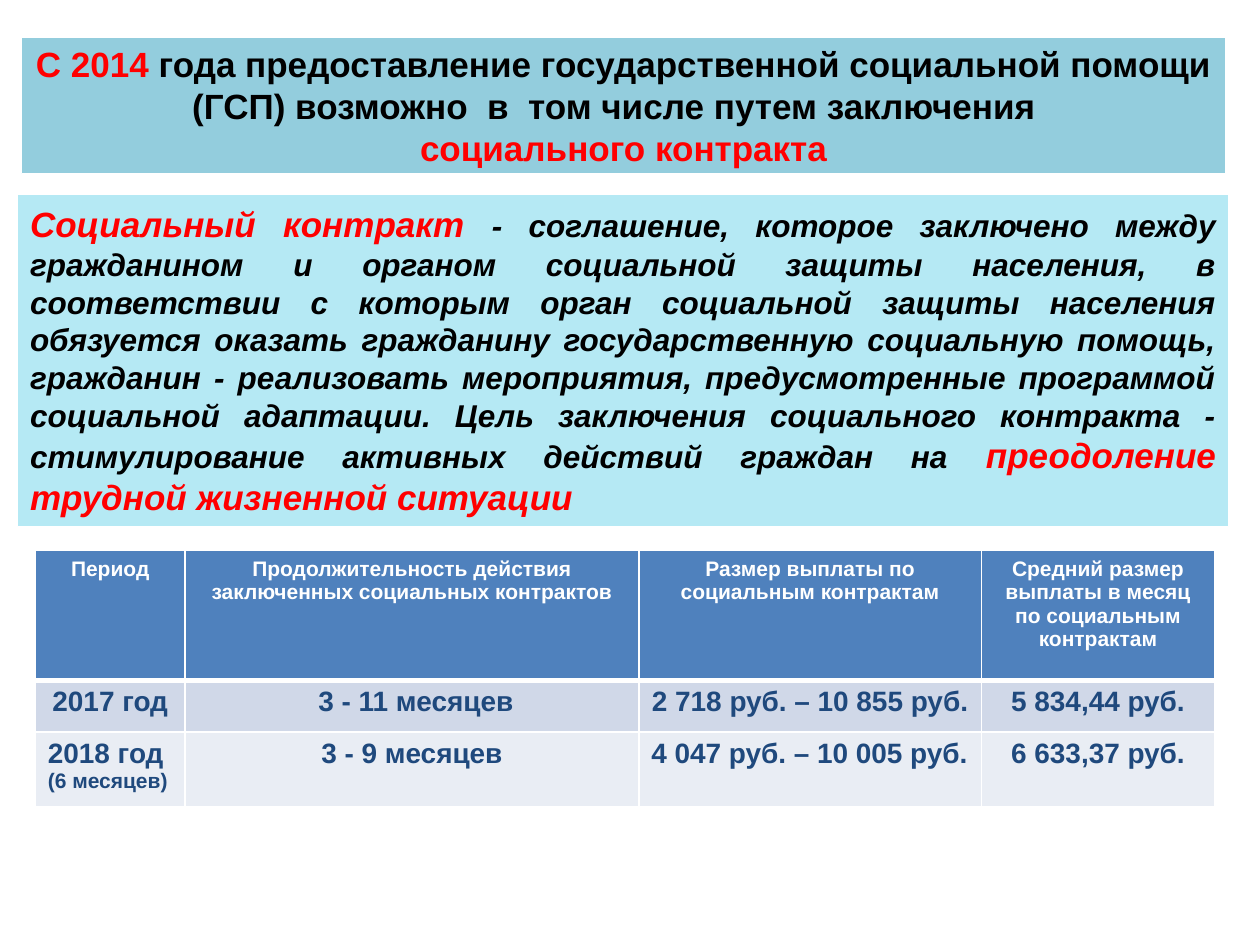
from lxml.etree import SubElement
from pptx import Presentation
from pptx.dml.color import RGBColor
from pptx.enum.shapes import MSO_SHAPE
from pptx.enum.text import MSO_ANCHOR, MSO_AUTO_SIZE, PP_ALIGN
from pptx.oxml.ns import qn
from pptx.util import Inches, Pt

WHITE = RGBColor(0xFF, 0xFF, 0xFF)
BLACK = RGBColor(0x00, 0x00, 0x00)
RED = RGBColor(0xFF, 0x00, 0x00)
NAVY = RGBColor(0x1F, 0x49, 0x7D)
TITLE_BLUE = RGBColor(0x93, 0xCD, 0xDD)
PALE_BLUE = RGBColor(0xB5, 0xE9, 0xF4)
ROW_FILLS = [RGBColor(0x4F, 0x81, 0xBD), RGBColor(0xD0, 0xD8, 0xE8), RGBColor(0xE9, 0xED, 0xF4)]


class SlideBuilder:
    font_name = "Arial"

    def __init__(self, slide):
        self.slide = slide

    def style(self, font, size, color):
        font.name, font.size, font.bold = self.font_name, Pt(size), True
        font.color.rgb = color

    def panel(self, shape, box, fill, line_width, alignment, runs, italic=False):
        """Format a filled box; each run is (text, size, color), None is a line break."""
        shape.left, shape.top, shape.width, shape.height = map(Inches, box)
        shape.fill.solid()
        shape.fill.fore_color.rgb = fill
        shape.line.color.rgb = WHITE
        shape.line.width = Pt(line_width)
        frame = shape.text_frame
        frame.word_wrap = True
        frame.auto_size = MSO_AUTO_SIZE.NONE
        frame.vertical_anchor = MSO_ANCHOR.MIDDLE
        paragraph = frame.paragraphs[0]
        paragraph.alignment = alignment
        for item in runs:
            if item is None:
                paragraph.add_line_break()
                continue
            text, size, color = item
            run = paragraph.add_run()
            run.text = text
            self.style(run.font, size, color)
            run.font.italic = italic

    def title(self, *settings):
        self.panel(self.slide.shapes.title, *settings)

    def box(self, *settings, **options):
        shape = self.slide.shapes.add_shape(MSO_SHAPE.RECTANGLE, 0, 0, 0, 0)
        shape.shadow.inherit = False
        self.panel(shape, *settings, **options)

    def cell(self, cell, lines, color, fill, alignment, borders):
        """Fill one cell; each line is (text, size)."""
        properties = cell._tc.get_or_add_tcPr()
        for side, width in borders.items():
            line = SubElement(properties, qn(f"a:ln{side}"), w=str(Pt(width)))
            SubElement(SubElement(line, qn("a:solidFill")), qn("a:srgbClr"), val=str(WHITE))
        cell.fill.solid()
        cell.fill.fore_color.rgb = fill
        frame = cell.text_frame
        for index, (text, size) in enumerate(lines):
            paragraph = frame.add_paragraph() if index else frame.paragraphs[0]
            paragraph.text = text
            paragraph.alignment = alignment
            self.style(paragraph.font, size, color)

    def table(self, left, top, widths, heights, rows, left_aligned):
        frame = self.slide.shapes.add_table(
            len(rows), len(widths), Inches(left), Inches(top),
            Inches(sum(widths)), Inches(sum(heights)))
        table = frame.table
        for column, width in zip(table.columns, widths):
            column.width = Inches(width)
        for row, height in zip(table.rows, heights):
            row.height = Inches(height)
        for r, row in enumerate(rows):
            # The header is set off by a thick rule
            borders = {"L": 1, "R": 1, "T": 3 if r == 1 else 1, "B": 3 if r == 0 else 1}
            for c, lines in enumerate(row):
                alignment = PP_ALIGN.LEFT if (r, c) in left_aligned else PP_ALIGN.CENTER
                self.cell(table.cell(r, c), lines, NAVY if r else WHITE,
                          ROW_FILLS[r], alignment, borders)


def main():
    presentation = Presentation()
    presentation.slide_width, presentation.slide_height = Inches(10), Inches(7.5)
    builder = SlideBuilder(presentation.slides.add_slide(presentation.slide_layouts[5]))

    # Headline
    builder.title((0.17, 0.3, 9.56, 1.08), TITLE_BLUE, 0.75, PP_ALIGN.CENTER, [
        ("С 2014 ", 20, RED),
        ("года предоставление государственной социальной помощи (ГСП) возможно  в  том числе "
         "путем заключения  ", 20, BLACK),
        None,
        ("социального контракта", 20, RED),
    ])

    # Definition
    builder.box((0.14, 1.54, 9.61, 2.64), PALE_BLUE, 0.75, PP_ALIGN.JUSTIFY, [
        ("Социальный контракт ", 20, RED),
        ("- соглашение, которое заключено между гражданином и органом социальной защиты населения, "
         "в соответствии с которым орган социальной защиты населения обязуется оказать гражданину "
         "государственную социальную помощь, гражданин - реализовать мероприятия, предусмотренные "
         "программой социальной адаптации. Цель заключения социального контракта - стимулирование "
         "активных действий граждан на ", 18, BLACK),
        ("преодоление трудной жизненной ситуации", 20, RED),
    ], italic=True)

    # Payments by period
    header = ["Период", "Продолжительность действия заключенных социальных контрактов",
              "Размер выплаты по социальным контрактам",
              "Средний размер выплаты в месяц по социальным контрактам"]
    year_2017 = ["2017 год", " 3 - 11 месяцев", "2 718 руб. – 10 855 руб.", "5 834,44 руб."]
    year_2018 = ["2018 год", "3 - 9 месяцев", "4 047 руб. – 10 005 руб.", "6 633,37 руб."]
    rows = [[[(text, size)] for text in row]
            for row, size in ((header, 12), (year_2017, 16), (year_2018, 16))]
    rows[2][0].append(("(6 месяцев)", 12))
    builder.table(0.28, 4.37, [1.19, 3.6, 2.72, 1.85], [1.03, 0.41, 0.59], rows,
                  left_aligned={(2, 0), (2, 2)})

    presentation.save("out.pptx")


if __name__ == "__main__":
    main()
